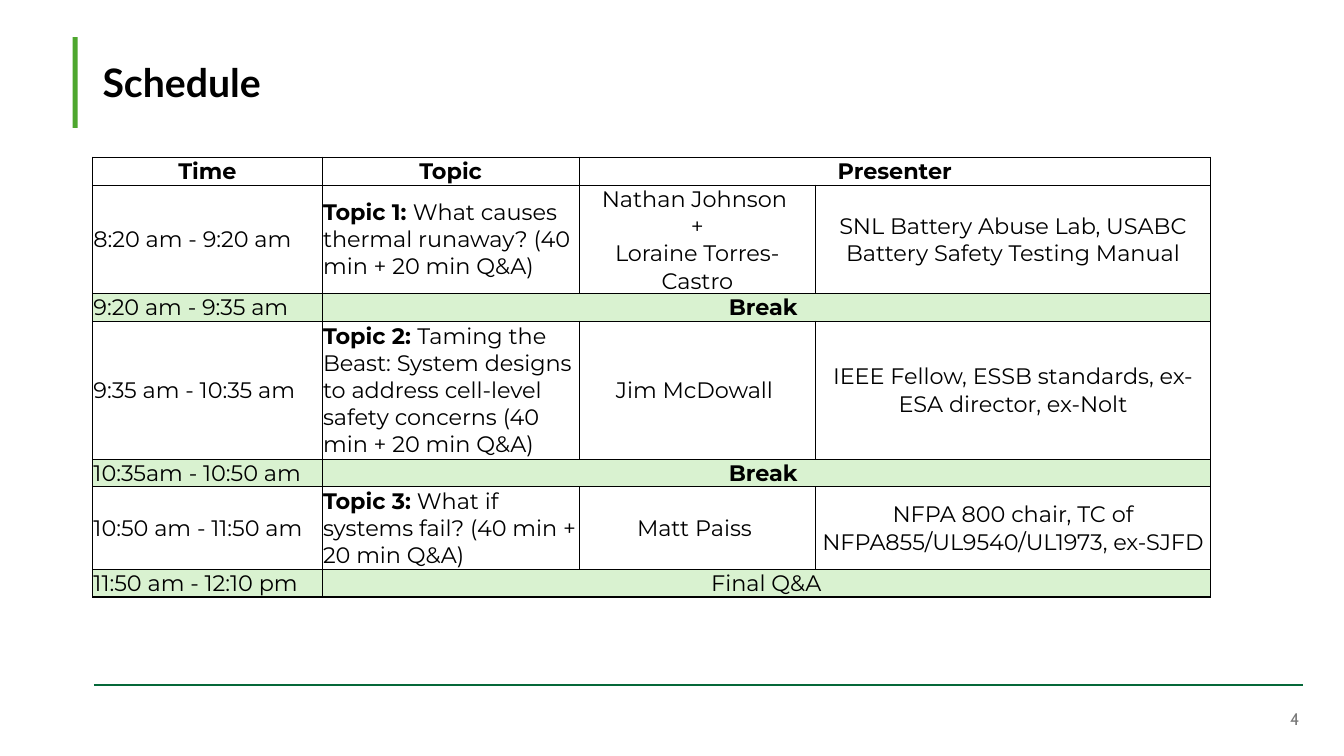
from lxml import etree
from pptx import Presentation
from pptx.dml.color import RGBColor
from pptx.enum import shapes, text
from pptx.oxml import ns
from pptx.util import Pt

BLACK, GREEN, PALE_GREEN, DARK_GREEN, GREY = "000000", "4EA72E", "D9F2D0", "056839", "797979"
LEFT, CENTER, RIGHT = text.PP_ALIGN.LEFT, text.PP_ALIGN.CENTER, text.PP_ALIGN.RIGHT
COLUMN_WIDTHS = [164, 183.5, 169, 282]
SESSION_HEIGHTS = {"8:20 am - 9:20 am": 59, "9:35 am - 10:35 am": 98.5, "10:50 am - 11:50 am": 59}
SINGLE_ROW_HEIGHT = 19.5

# Each row lists its cells; a cell is a list of (text, bold) runs.
# The last cell of a short row spans the remaining columns.
SCHEDULE = [
    [[("Time", True)], [("Topic", True)], [("Presenter", True)]],
    [[("8:20 am - 9:20 am", False)],
     [("Topic 1: ", True), ("What causes thermal runaway? (40 min + 20 min Q&A)", False)],
     [("Nathan Johnson \n+\nLoraine Torres-Castro", False)],
     [("SNL Battery Abuse Lab, USABC Battery Safety Testing Manual", False)]],
    [[("9:20 am - 9:35 am", False)], [("Break ", True)]],
    [[("9:35 am - 10:35 am", False)],
     [("Topic 2: ", True),
      ("Taming the Beast: System designs to address cell-level safety concerns "
       "(40 min + 20 min Q&A)", False)],
     [("Jim McDowall ", False)],
     [("IEEE Fellow, ESSB standards, ex-ESA director, ex-Nolt", False)]],
    [[("10:35am - 10:50 am", False)], [("Break ", True)]],
    [[("10:50 am - 11:50 am", False)],
     [("Topic 3:", True), (" What if systems fail? (40 min + 20 min Q&A)", False)],
     [("Matt Paiss ", False)],
     [("NFPA 800 chair, TC of NFPA855/UL9540/UL1973, ex-SJFD", False)]],
    [[("11:50 am - 12:10 pm", False)], [("Final Q&A", False)]],
]


def color(hex_value):
    return RGBColor.from_string(hex_value)


def add_run(paragraph, content, font_name, size, hex_value, bold=False):
    for index, line in enumerate(content.split("\n")):
        if index:
            paragraph.add_line_break()
        run = paragraph.add_run()
        run.text = line
        run.font.name, run.font.size, run.font.bold = font_name, Pt(size), bold
        run.font.color.rgb = color(hex_value)


def add_text_box(slide, box, alignment):
    frame = slide.shapes.add_textbox(*map(Pt, box)).text_frame
    frame.word_wrap = True
    frame.vertical_anchor = text.MSO_ANCHOR.MIDDLE
    paragraph = frame.paragraphs[0]
    paragraph.alignment = alignment
    return paragraph


def add_header(slide, left, top, width, height):
    # Accent bar
    bar = slide.shapes.add_shape(shapes.MSO_SHAPE.RECTANGLE, Pt(left), Pt(top), Pt(3.6), Pt(height))
    bar.shadow.inherit = False
    bar.fill.solid()
    bar.fill.fore_color.rgb = color(GREEN)
    bar.line.fill.background()
    # Title
    title = add_text_box(slide, (left + 14.4, top + 10.8, width - 14.4, 44), LEFT)
    title.line_spacing = Pt(32)
    add_run(title, "Schedule", "Lato", 28, BLACK, True)


def set_borders(cell, widths):
    properties = cell._tc.get_or_add_tcPr()
    for side, width in zip("LRTB", widths):
        line = etree.SubElement(properties, ns.qn("a:ln" + side), w=str(Pt(width)))
        fill = etree.SubElement(line, ns.qn("a:solidFill"))
        etree.SubElement(fill, ns.qn("a:srgbClr"), val=BLACK)


def add_schedule(slide, left, top):
    row_count, column_count = len(SCHEDULE), len(COLUMN_WIDTHS)
    heights = [SESSION_HEIGHTS.get(row[0][0][0], SINGLE_ROW_HEIGHT) for row in SCHEDULE]
    table = slide.shapes.add_table(row_count, column_count, Pt(left), Pt(top),
                                   Pt(sum(COLUMN_WIDTHS)), Pt(sum(heights))).table
    table.first_row = table.horz_banding = False
    for column, width in zip(table.columns, COLUMN_WIDTHS):
        column.width = Pt(width)
    for row_index, (cells, height) in enumerate(zip(SCHEDULE, heights)):
        table.rows[row_index].height = Pt(height)
        is_header = row_index == 0
        is_break = len(cells) == 2
        # Borders and fill: heavier lines around the outside
        for column_index in range(column_count):
            cell = table.cell(row_index, column_index)
            outer = (column_index == 0, column_index == column_count - 1,
                     is_header, row_index == row_count - 1)
            set_borders(cell, [1 if edge else 0.5 for edge in outer])
            if is_break:
                cell.fill.solid()
                cell.fill.fore_color.rgb = color(PALE_GREEN)
            else:
                cell.fill.background()
        if len(cells) < column_count:
            table.cell(row_index, len(cells) - 1).merge(table.cell(row_index, column_count - 1))
        # Wording
        for column_index, runs in enumerate(cells):
            cell = table.cell(row_index, column_index)
            cell.margin_left = cell.margin_right = cell.margin_top = Pt(0.6)
            cell.margin_bottom = 0
            cell.vertical_anchor = text.MSO_ANCHOR.BOTTOM if is_header else text.MSO_ANCHOR.MIDDLE
            paragraph = cell.text_frame.paragraphs[0]
            is_left = column_index == 0 or (column_index == 1 and not is_break)
            paragraph.alignment = LEFT if is_left and not is_header else CENTER
            for content, bold in runs:
                add_run(paragraph, content, "Montserrat", 16, BLACK, bold)


def add_footer(slide, left, top, width):
    # Rule
    rule = slide.shapes.add_connector(shapes.MSO_CONNECTOR.STRAIGHT,
                                      Pt(left), Pt(top), Pt(left + width), Pt(top))
    rule.line.color.rgb = color(DARK_GREEN)
    rule.line.width = Pt(1.5)
    etree.SubElement(rule._element.spPr, ns.qn("a:effectLst"))
    # Page number
    number = add_text_box(slide, (left + width - 211.7, top + 10, 216, 28.8), RIGHT)
    add_run(number, "4", "Cabin", 12, GREY)


def main():
    presentation = Presentation()
    presentation.slide_width, presentation.slide_height = Pt(960), Pt(540)
    slide = presentation.slides.add_slide(presentation.slide_layouts[6])
    add_footer(slide, 67, 489, 864)
    add_header(slide, 51.8, 26.6, 842.4, 64.8)
    add_schedule(slide, 66.2, 112.3)
    presentation.save("out.pptx")


if __name__ == "__main__":
    main()
